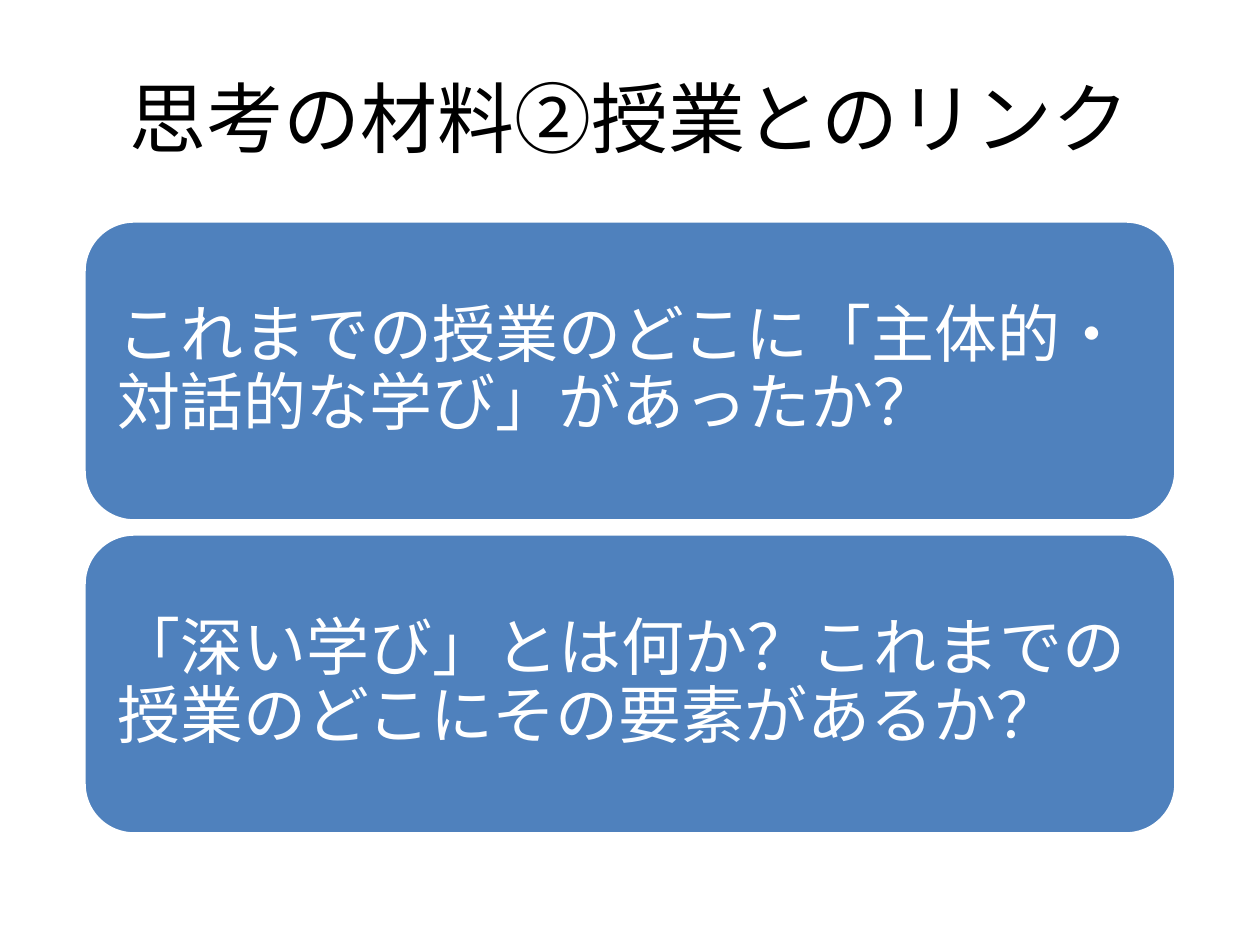
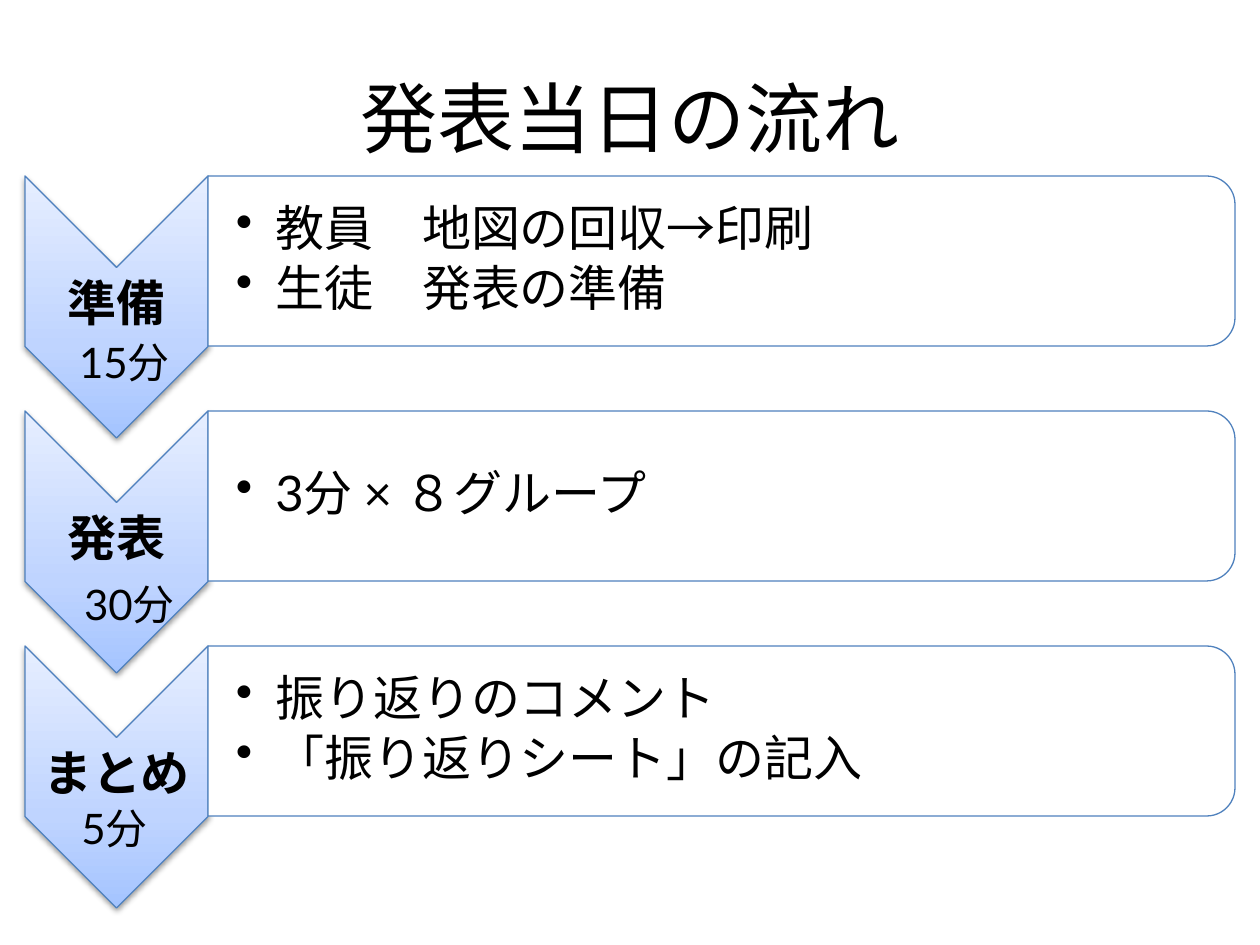
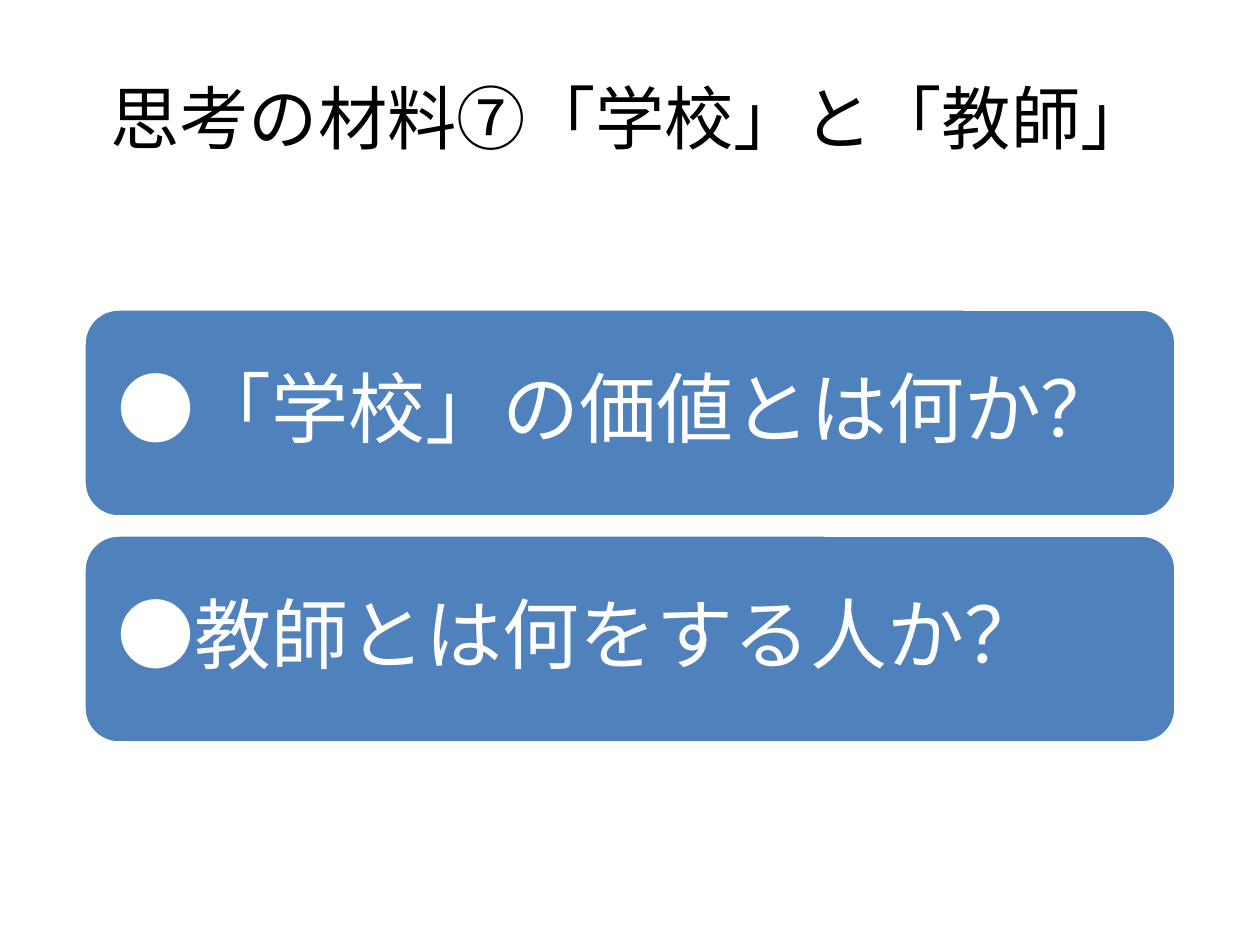
"""Build three lesson slides: two with question blocks and one with the day's schedule."""
import lxml.etree
import pptx
import pptx.dml.color
import pptx.enum.shapes
import pptx.enum.text
import pptx.oxml
import pptx.util

PX = 914400 / 126
FONT = "Lato"
BLUE, WHITE, BLACK = "4F81BD", "FFFFFF", "000000"
KIND = pptx.enum.shapes.MSO_SHAPE
ALIGN = pptx.enum.text.PP_ALIGN
MID = pptx.enum.text.MSO_ANCHOR.MIDDLE
NS = 'xmlns:a="http://schemas.openxmlformats.org/drawingml/2006/main"'
STOPS = "".join(
    f'<a:gs pos="{pos}000"><a:srgbClr val="{tint}"/></a:gs>'
    for pos, tint in ((0, "A4C4FF"), (35, "BFD4FF"), (100, "E6EEFF"))
)
FADE = (f'<a:gradFill {NS} rotWithShape="0"><a:gsLst>{STOPS}</a:gsLst>'
        '<a:lin ang="16200000" scaled="0"/></a:gradFill>')
SHADE = (f'<a:effectLst {NS}><a:outerShdw blurRad="40000" dist="20000" dir="5400000" '
         f'rotWithShape="0"><a:srgbClr val="{BLACK}"><a:alpha val="38000"/></a:srgbClr>'
         '</a:outerShdw></a:effectLst>')


def hue(code):
    return pptx.dml.color.RGBColor.from_string(code)


def write(frame, lines, size, tint, align, pad=None, after=0, bold=False):
    frame.word_wrap = True
    if pad is not None:
        frame.vertical_anchor = MID
        sides = ("left", "top", "right", "bottom")
        for side, gap in zip(sides, pad):
            setattr(frame, f"margin_{side}", round(gap * PX))
    for num, line in enumerate(lines):
        para = frame.paragraphs[0] if num == 0 else frame.add_paragraph()
        para.alignment = align
        if after:
            para.line_spacing = 0.9
            para.space_after = pptx.util.Pt(round(size * after, 1))
        run = para.add_run()
        run.text = line
        run.font.name = FONT
        run.font.size = pptx.util.Pt(size)
        run.font.bold = bold
        run.font.color.rgb = hue(tint)


deck = pptx.Presentation()
deck.slide_width = round(1260 * PX)
deck.slide_height = round(945 * PX)

slides = []
for title, size in (
    ("思考の材料②授業とのリンク", 44),
    ("発表当日の流れ", 44),
    ("思考の材料⑦「学校」と「教師」", 39.6),
):
    slide = deck.slides.add_slide(deck.slide_layouts[5])
    head = slide.shapes.title
    head.left, head.top, head.width, head.height = (
        round(n * PX) for n in (63, 38, 1134, 157))
    write(head.text_frame, [title], size, BLACK, ALIGN.CENTER)
    slides.append(slide)
link, flow, school = slides

for slide, top, step, high, size, pad, asks in (
    (link, 221, 313, 300, 36, 19, (
        "これまでの授業のどこに「主体的・対話的な学び」があったか？",
        "「深い学び」とは何か？これまでの授業のどこにその要素があるか？")),
    (school, 309, 226, 208, 44, 23, (
        "●「学校」の価値とは何か？",
        "●教師とは何をする人か？")),
):
    for row, ask in enumerate(asks):
        box = (84, top + row * step, 1092, high)
        block = slide.shapes.add_shape(KIND.ROUNDED_RECTANGLE, *(round(n * PX) for n in box))
        block.shadow.inherit = False
        block.fill.solid()
        block.fill.fore_color.rgb = hue(BLUE)
        block.line.color.rgb = hue(WHITE)
        block.line.width = pptx.util.Pt(2)
        write(block.text_frame, [ask], size, WHITE, ALIGN.LEFT, [pad] * 4, 0.35)

steps = (
    ("準備", ("教員　地図の回収→印刷", "生徒　発表の準備")),
    ("発表", ("3分 × ８グループ",)),
    ("まとめ", ("振り返りのコメント", "「振り返りシート」の記入")),
)
for row, (name, tasks) in enumerate(steps):
    top = 176 + row * 235
    for kind, left, wide, high in (
        (KIND.CHEVRON, 25, 183, 262),
        (KIND.ROUND_2_SAME_RECTANGLE, 208, 1027, 170),
    ):
        turn = (wide - high) / 2
        box = (left + turn, top - turn, high, wide)
        part = flow.shapes.add_shape(kind, *(round(n * PX) for n in box))
        part.rotation = 90
        part.shadow.inherit = False
        part.fill.solid()
        part.fill.fore_color.rgb = hue(WHITE)
        part.line.color.rgb = hue(BLUE)
        part.line.width = pptx.util.Pt(0.75)
        if kind == KIND.CHEVRON:
            props = part.element.spPr
            for tag, xml in (("solidFill", FADE), ("effectLst", SHADE)):
                old = props.find(pptx.oxml.ns.qn(f"a:{tag}"))
                props.replace(old, pptx.oxml.parse_xml(xml))
    for lines, box, align, pad, after, bold in (
        ([name], (25, top + 91, 183, 78), ALIGN.CENTER, [2] * 4, 0.35, True),
        (tasks, (208, top + 8, 1019, 154), ALIGN.LEFT, (28, 2, 2, 2), 0.15, False),
    ):
        text = flow.shapes.add_textbox(*(round(n * PX) for n in box))
        write(text.text_frame, lines, 28, BLACK, align, pad, after, bold)
    for para in text.text_frame.paragraphs:
        para.level = 1
        props = para._p.get_or_add_pPr()
        props.set("marL", "285750")
        props.set("indent", "-285750")
        dot = lxml.etree.SubElement(props, pptx.oxml.ns.qn("a:buChar"))
        dot.set("char", "•")

for time, left, top in (("15分", 35, 330), ("30分", 40, 572), ("5分", 25, 796)):
    box = (left, top, 179, 63)
    text = flow.shapes.add_textbox(*(round(n * PX) for n in box))
    write(text.text_frame, [time], 24, BLACK, ALIGN.CENTER)

deck.save("out.pptx")
